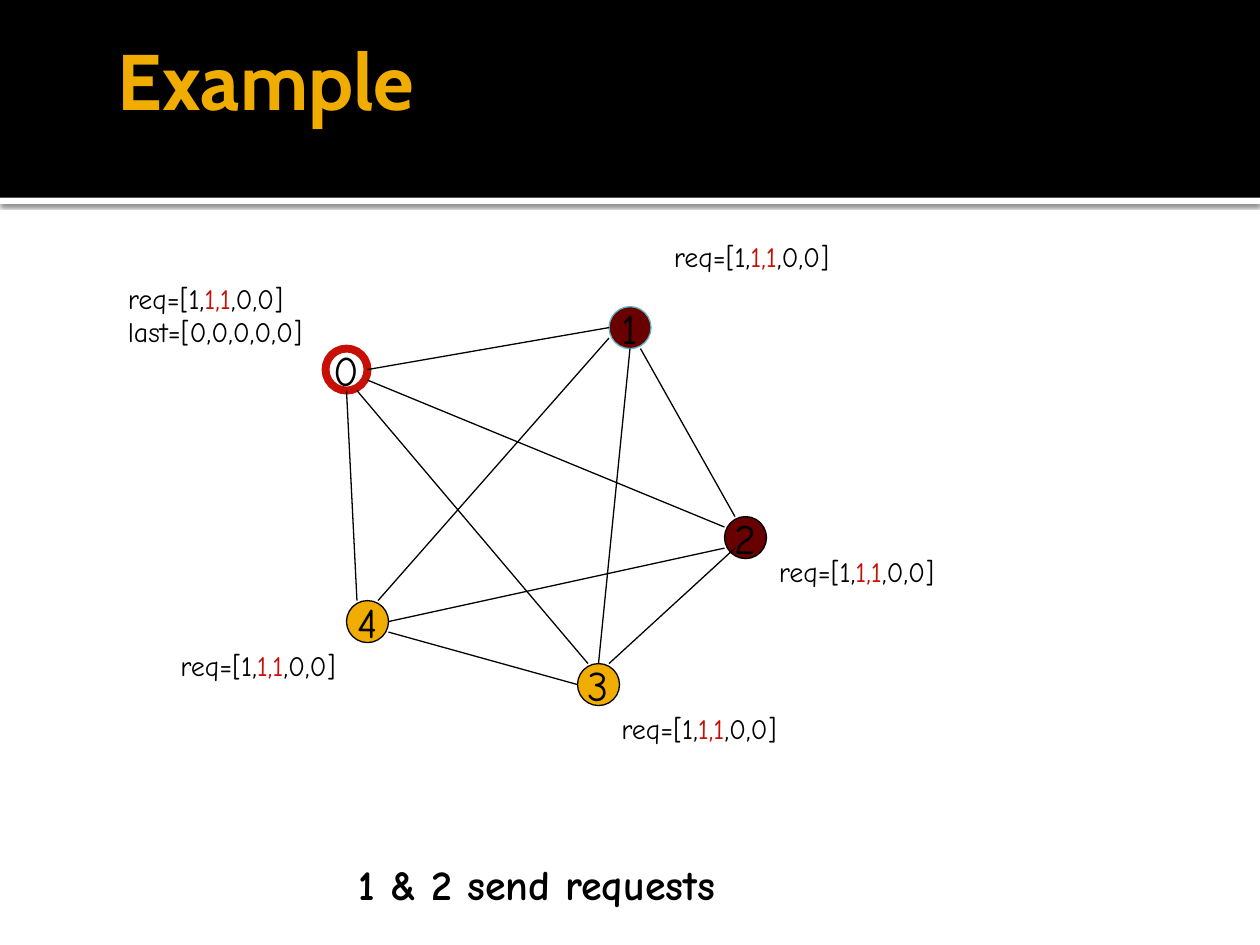
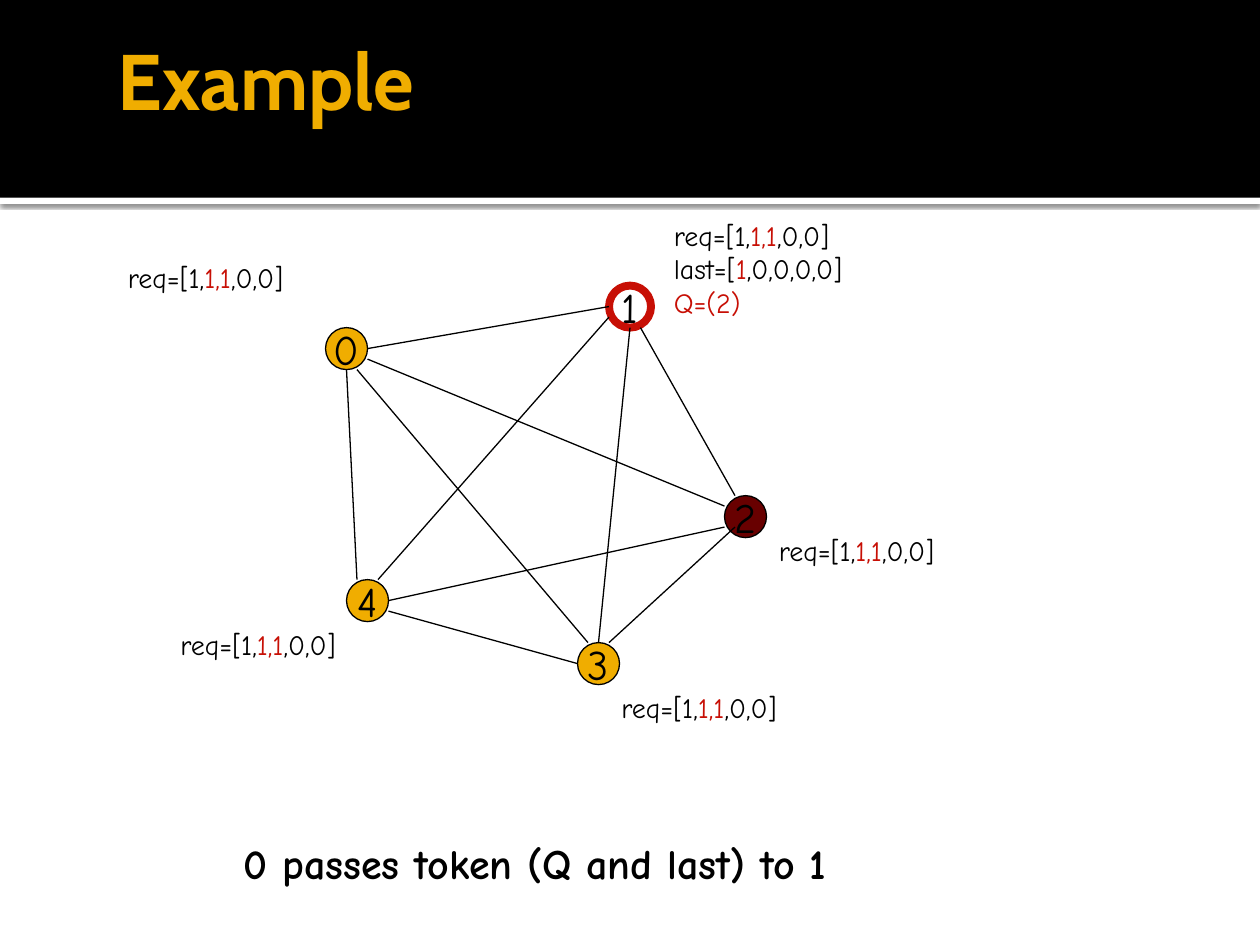
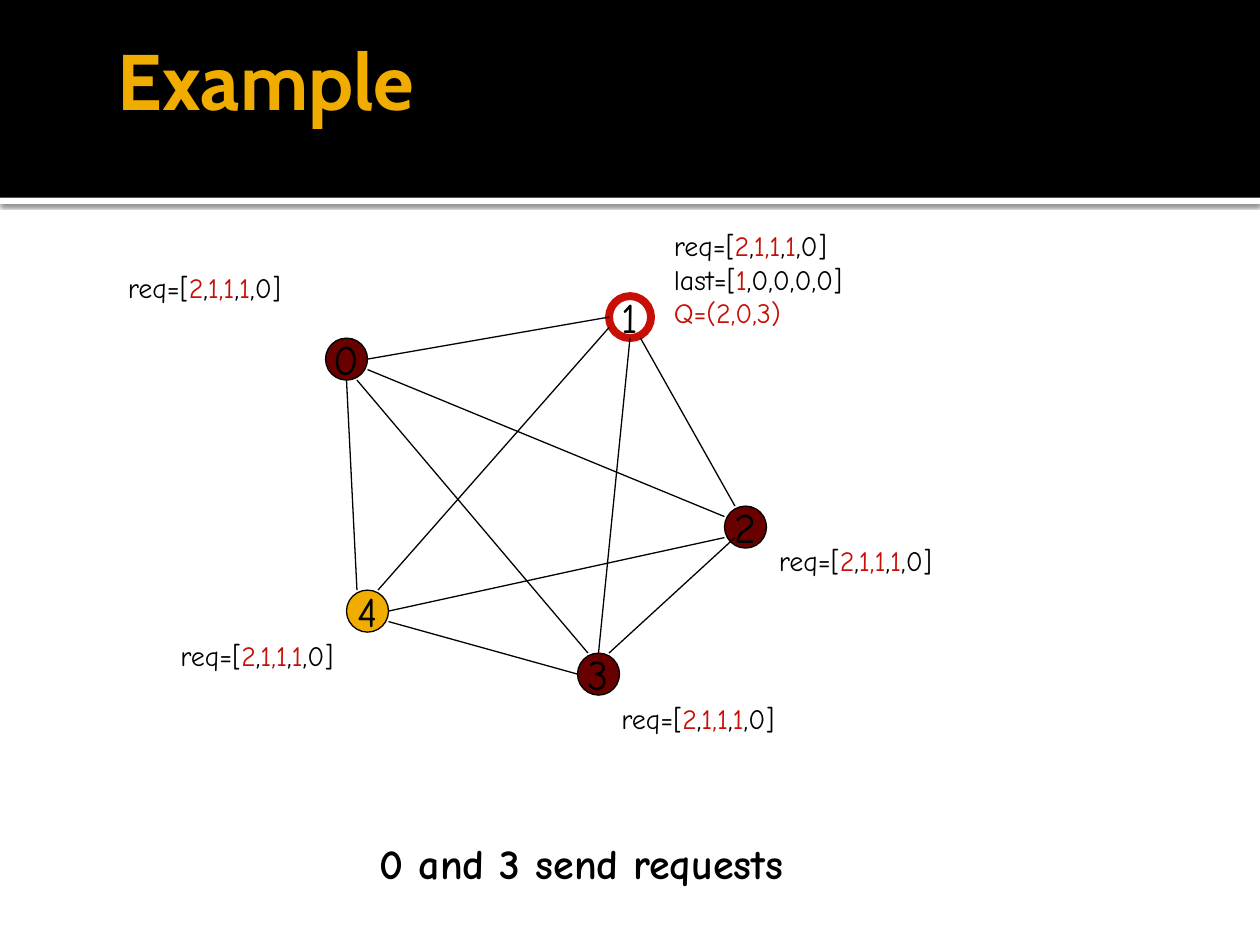
from dataclasses import dataclass

from lxml.etree import SubElement
from pptx import Presentation
from pptx.dml.color import RGBColor
from pptx.enum.shapes import MSO_CONNECTOR as Connector, MSO_SHAPE as Shape
from pptx.enum.text import MSO_ANCHOR as Anchor, PP_ALIGN as Align
from pptx.oxml.ns import qn
from pptx.util import Pt


@dataclass(frozen=True)
class Theme:
    black: str = "000000"
    white: str = "FFFFFF"
    gold: str = "F0AD00"
    maroon: str = "680000"
    red: str = "C70F05"
    teal: str = "60B5CC"
    heading_font: str = "Cabin"
    body_font: str = "Comic Neue"
    heading_size: int = 45
    large_size: int = 24
    label_size: int = 16
    thin: float = 0.75
    thick: float = 4.5


theme = Theme()

NODE_SIZE = 24
NODE_CENTERS = {0: (198, 192), 2: (426, 288), 1: (360, 168), 3: (342, 372), 4: (210, 336)}
LABEL_PLACES = [(66, 138), (378, 114), (438, 294), (348, 384), (96, 348)]

LINKS = [
    (0, (12, 0), 1, (-12, 0)),
    (1, (6, 12), 2, (-6, -12)),
    (2, (-6, 6), 3, (6, -12)),
    (3, (-12, 0), 4, (12, 6)),
    (4, (-6, -12), 0, (0, 12)),
    (0, (12, 6), 2, (-12, -6)),
    (0, (6, 12), 3, (-6, -12)),
    (1, (0, 12), 3, (0, -12)),
    (1, (-12, 6), 4, (6, -12)),
    (2, (-12, 6), 4, (12, 0)),
]

STATES = {
    "holder": (None, theme.red, theme.thick),
    "idle": (theme.gold, theme.black, theme.thin),
    "waiting": (theme.maroon, theme.black, theme.thin),
    "waiting, teal rim": (theme.maroon, theme.teal, theme.thin),
}

TITLE = "Example"
RED_MARK = "*"

STEPS = [
    {
        "top": 19.2,
        "states": ["holder", "waiting, teal rim", "waiting", "idle", "idle"],
        "request": "req=[1,*1,1*,0,0]",
        "details": {0: ["last=[0,0,0,0,0]"]},
        "caption": "1 & 2 send requests",
        "caption_box": (198, 487.2, 318, 41),
    },
    {
        "top": 7.2,
        "states": ["idle", "holder", "waiting", "idle", "idle"],
        "request": "req=[1,*1,1*,0,0]",
        "details": {1: ["last=[*1*,0,0,0,0]", "*Q=(2)*"]},
        "caption": "0 passes token (Q and last) to 1",
        "caption_box": (132, 475.2, 462, 41),
    },
    {
        "top": 13.2,
        "states": ["waiting", "holder", "waiting", "waiting", "idle"],
        "request": "req=[*2*,*1,1*,*1*,0]",
        "details": {1: ["last=[*1*,0,0,0,0]", "*Q=(2,0,3)*"]},
        "caption": "0 and 3 send requests",
        "caption_box": (210, 475.2, 330, 41),
    },
]


def apply(target, values):
    for name, value in values.items():
        setattr(target, name, value)


def color(code):
    return RGBColor.from_string(code)


def add_span(para, text, size, code, font=theme.body_font, bold=False):
    span = para.add_run()
    span.text = text
    apply(span.font, {"name": font, "size": Pt(size), "bold": bold})
    span.font.color.rgb = color(code)


def add_box(page, place, **frame_format):
    box = page.shapes.add_textbox(*map(Pt, place))
    apply(box.text_frame, {"word_wrap": True, **frame_format})
    return box.text_frame


def add_shape(page, kind, place, fill, line=None, width=0):
    shape = page.shapes.add_shape(kind, *map(Pt, place))
    shape.shadow.inherit = False
    if fill:
        shape.fill.solid()
        shape.fill.fore_color.rgb = color(fill)
    else:
        shape.fill.background()
    if line:
        shape.line.color.rgb = color(line)
        shape.line.width = Pt(width)
    else:
        shape.line.fill.background()
    return shape


def add_header(page):
    rule = add_shape(page, Shape.RECTANGLE, (0, 113, 720, 3.6), theme.white)
    effects = rule.element.spPr.find(qn("a:effectLst"))
    shadow = SubElement(effects, qn("a:outerShdw"), blurRad=str(Pt(2.5)),
                        dist=str(Pt(0.8)), dir="5400000", rotWithShape="0")
    tint = SubElement(shadow, qn("a:srgbClr"), val=theme.black)
    SubElement(tint, qn("a:alpha"), val="60000")
    add_shape(page, Shape.RECTANGLE, (0, 0, 720, 113), theme.black)
    frame = add_box(page, (60, 0, 612, 90), vertical_anchor=Anchor.MIDDLE, margin_right=Pt(3.6))
    add_span(frame.paragraphs[0], TITLE, theme.heading_size, theme.gold, theme.heading_font, True)


def add_node(page, number, state, top):
    x, y = NODE_CENTERS[number]
    place = (x - NODE_SIZE / 2, y - NODE_SIZE / 2 + top, NODE_SIZE, NODE_SIZE)
    frame = add_shape(page, Shape.OVAL, place, *STATES[state]).text_frame
    apply(frame, {"word_wrap": False, "vertical_anchor": Anchor.MIDDLE})
    para = frame.paragraphs[0]
    para.alignment = Align.CENTER
    add_span(para, str(number), theme.large_size, theme.black)


def add_link(page, start, start_offset, end, end_offset, top):
    x1, y1 = map(sum, zip(NODE_CENTERS[start], start_offset))
    x2, y2 = map(sum, zip(NODE_CENTERS[end], end_offset))
    link = page.shapes.add_connector(Connector.STRAIGHT, Pt(x1), Pt(y1 + top), Pt(x2), Pt(y2 + top))
    link.line.color.rgb = color(theme.black)
    link.line.width = Pt(theme.thin)
    SubElement(link.element.spPr, qn("a:effectLst"))


def add_label(page, place, lines, top):
    x, y = place
    width = 118 if len(lines) == 1 else 128
    frame = add_box(page, (x, y + top, width, 7.2 + 22.3 * len(lines)))
    for index, line in enumerate(lines):
        para = frame.add_paragraph() if index else frame.paragraphs[0]
        for position, part in enumerate(line.split(RED_MARK)):
            if part:
                add_span(para, part, theme.label_size, theme.red if position % 2 else theme.black)


def add_step(deck, step):
    page = deck.slides.add_slide(deck.slide_layouts[6])
    top = step["top"]
    add_header(page)
    for number in NODE_CENTERS:
        add_node(page, number, step["states"][number], top)
    for link in LINKS:
        add_link(page, *link, top)
    for number, place in enumerate(LABEL_PLACES):
        add_label(page, place, [step["request"], *step["details"].get(number, [])], top)
    caption = add_box(page, step["caption_box"])
    add_span(caption.paragraphs[0], step["caption"], theme.large_size, theme.black, bold=True)


def main():
    deck = Presentation()
    apply(deck, {"slide_width": Pt(720), "slide_height": Pt(540)})
    for step in STEPS:
        add_step(deck, step)
    deck.save("out.pptx")


if __name__ == "__main__":
    main()
